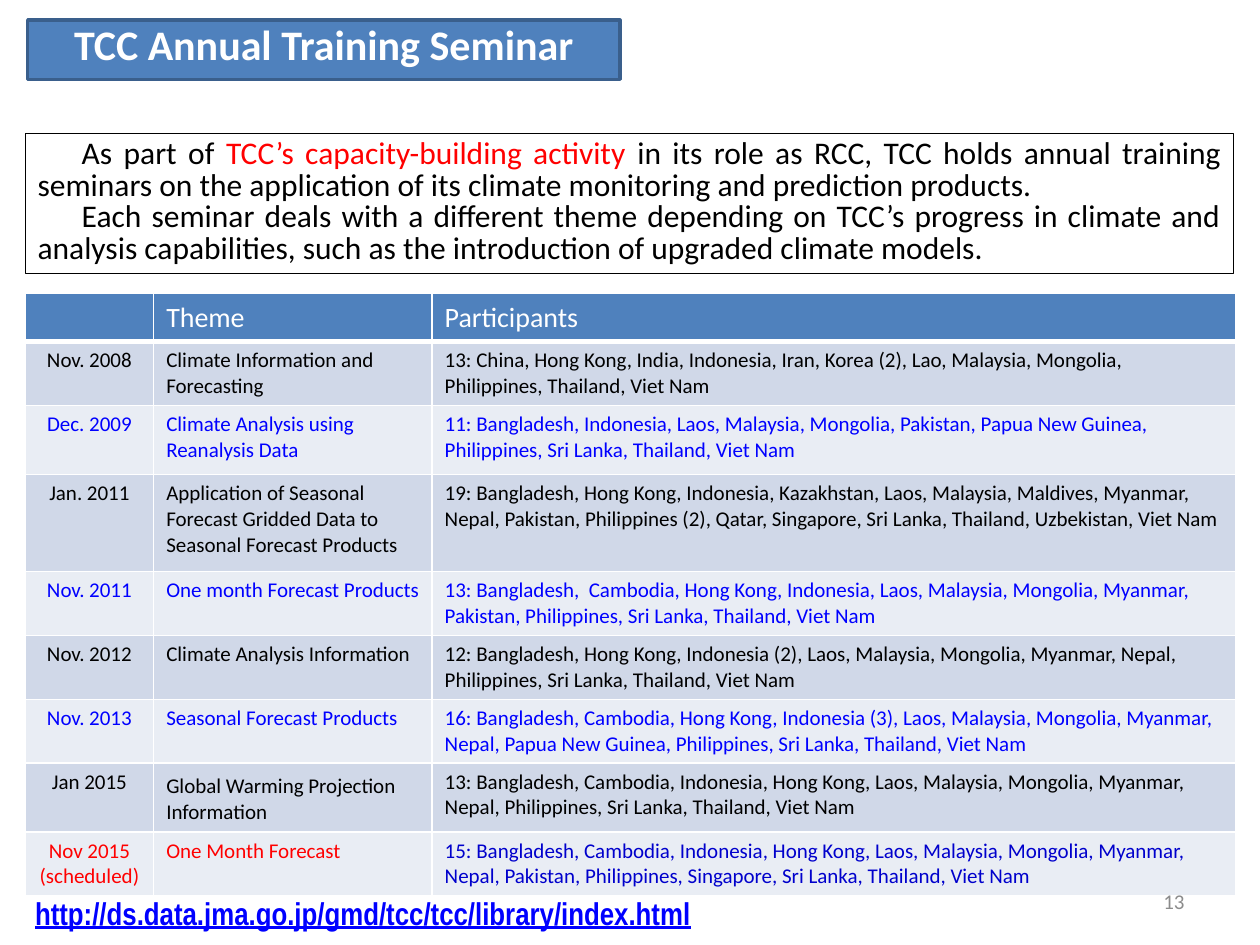
from lxml import etree
from pptx import Presentation
from pptx import util as u
from pptx.dml.color import RGBColor
from pptx.enum import shapes, text
from pptx.oxml.ns import qn

COLORS = {
    "white": "FFFFFF", "black": "000000", "red": "FF0000", "blue": "0000FF",
    "navy": "0000CC", "gray": "8C8C8C", "header": "4F81BD", "outline": "3A5F8C",
    "odd": "D0D8E8", "even": "E9EDF4",
}
ALIGN = text.PP_ALIGN
TITLE = "TCC Annual Training Seminar"
INTRO = [
    [("As part of ", "black"), ("TCC’s capacity-building activity ", "red"),
     ("in its role as RCC, TCC holds annual training seminars on the application "
      "of its climate monitoring and prediction products.", "black")],
    [("Each seminar deals with a different theme depending on TCC’s progress in climate and "
      "analysis capabilities, such as the introduction of upgraded climate models.", "black")],
]
HEADER = ("", "Theme", "Participants")
SEMINARS = [
    ("Nov. 2008", "Climate Information and Forecasting",
     "13: China, Hong Kong, India, Indonesia, Iran, Korea (2), Lao, Malaysia, Mongolia, "
     "Philippines, Thailand, Viet Nam"),
    ("Dec. 2009", "Climate Analysis using Reanalysis Data",
     "11: Bangladesh, Indonesia, Laos, Malaysia, Mongolia, Pakistan, Papua New Guinea, "
     "Philippines, Sri Lanka, Thailand, Viet Nam"),
    ("Jan. 2011", "Application of Seasonal Forecast Gridded Data to Seasonal Forecast Products",
     "19: Bangladesh, Hong Kong, Indonesia, Kazakhstan, Laos, Malaysia, Maldives, Myanmar, "
     "Nepal, Pakistan, Philippines (2), Qatar, Singapore, Sri Lanka, Thailand, Uzbekistan, Viet Nam"),
    ("Nov. 2011", "One month Forecast Products",
     "13: Bangladesh,  Cambodia, Hong Kong, Indonesia, Laos, Malaysia, Mongolia, Myanmar, "
     "Pakistan, Philippines, Sri Lanka, Thailand, Viet Nam"),
    ("Nov. 2012", "Climate Analysis Information",
     "12: Bangladesh, Hong Kong, Indonesia (2), Laos, Malaysia, Mongolia, Myanmar, Nepal, "
     "Philippines, Sri Lanka, Thailand, Viet Nam"),
    ("Nov. 2013", "Seasonal Forecast Products",
     "16: Bangladesh, Cambodia, Hong Kong, Indonesia (3), Laos, Malaysia, Mongolia, Myanmar, "
     "Nepal, Papua New Guinea, Philippines, Sri Lanka, Thailand, Viet Nam"),
    ("Jan 2015", "Global Warming Projection　Information",
     "13: Bangladesh, Cambodia, Indonesia, Hong Kong, Laos, Malaysia, Mongolia, Myanmar, "
     "Nepal, Philippines, Sri Lanka, Thailand, Viet Nam"),
    ("Nov 2015\n(scheduled)", "One Month Forecast",
     "15: Bangladesh, Cambodia, Indonesia, Hong Kong, Laos, Malaysia, Mongolia, Myanmar, "
     "Nepal, Pakistan, Philippines, Singapore, Sri Lanka, Thailand, Viet Nam"),
]
SCHEDULED_COLORS = ("red", "red", "navy")
COLUMN_WIDTHS = (1.02, 2.21, 6.38)
ROW_HEIGHTS = (0.37, 0.5, 0.55, 0.77) + (0.5,) * 5
URL = "http://ds.data.jma.go.jp/gmd/tcc/tcc/library/index.html"
PAGE = "13"


def rgb(name):
    return RGBColor.from_string(COLORS[name])


def box(*lengths):
    return [u.Inches(length) for length in lengths]


def paint(shape, line, width, fill=None):
    if fill:
        shape.fill.solid()
        shape.fill.fore_color.rgb = rgb(fill)
    else:
        shape.fill.background()
    shape.line.color.rgb = rgb(line)
    shape.line.width = u.Pt(width)


def write(frame, paragraphs, size, align=ALIGN.LEFT, spacing=None, name="Calibri", **formats):
    formats = {"size": u.Pt(size), "name": name, "bold": False, **formats}
    for index, runs in enumerate(paragraphs):
        paragraph = frame.add_paragraph() if index else frame.paragraphs[0]
        paragraph.alignment = align
        if spacing:
            paragraph.line_spacing = u.Pt(spacing)
        for content, color in runs:
            run = paragraph.add_run()
            run.text = content
            run.font.color.rgb = rgb(color)
            for key, value in formats.items():
                setattr(run.font, key, value)


def border(cell, bottom):
    properties = cell._tc.get_or_add_tcPr()
    for side, width in (("L", 1), ("R", 1), ("T", 1), ("B", bottom)):
        line = etree.SubElement(properties, qn(f"a:ln{side}"), w=str(u.Pt(width)))
        fill = etree.SubElement(line, qn("a:solidFill"))
        etree.SubElement(fill, qn("a:srgbClr"), val=COLORS["white"])


def add_title(slide):
    title = slide.shapes.title
    title.left, title.top, title.width, title.height = box(0.22, 0.16, 4.7, 0.47)
    geometry = etree.SubElement(title._element.spPr, qn("a:prstGeom"), prst="roundRect")
    etree.SubElement(geometry, qn("a:avLst"))
    paint(title, "outline", 2, "header")
    frame = title.text_frame
    frame.auto_size = text.MSO_AUTO_SIZE.NONE
    frame.vertical_anchor = text.MSO_ANCHOR.MIDDLE
    write(frame, [[(TITLE, "white")]], 24, ALIGN.CENTER, 22, bold=True)


def add_intro(slide):
    shape = slide.shapes.add_shape(shapes.MSO_SHAPE.RECTANGLE, *box(0.2, 1.06, 9.59, 1.11))
    shape.shadow.inherit = False
    paint(shape, "black", 0.75)
    frame = shape.text_frame
    frame.word_wrap = True
    frame.vertical_anchor = text.MSO_ANCHOR.TOP
    write(frame, INTRO, 18, ALIGN.JUSTIFY, 18)
    for paragraph in frame.paragraphs:
        paragraph._p.get_or_add_pPr().set("indent", str(u.Inches(0.35)))


def add_seminars(slide):
    rows = [HEADER] + SEMINARS
    table = slide.shapes.add_table(
        len(rows), len(HEADER),
        *box(0.2, 2.33, sum(COLUMN_WIDTHS), sum(ROW_HEIGHTS))).table
    for column, width in zip(table.columns, COLUMN_WIDTHS):
        column.width = u.Inches(width)
    for r, (row, height) in enumerate(zip(rows, ROW_HEIGHTS)):
        table.rows[r].height = u.Inches(height)
        band = "odd" if r % 2 else "even"
        colors = ("black" if r % 2 else "blue",) * 3
        if r == 0:
            band, colors = "header", ("white",) * 3
        elif r == len(SEMINARS):
            colors = SCHEDULED_COLORS
        for c, (content, color) in enumerate(zip(row, colors)):
            cell = table.cell(r, c)
            border(cell, 1 if r else 3)
            cell.fill.solid()
            cell.fill.fore_color.rgb = rgb(band)
            cell.vertical_anchor = text.MSO_ANCHOR.TOP if r else text.MSO_ANCHOR.MIDDLE
            write(cell.text_frame, [[(line, color)] for line in content.split("\n")],
                  12 if r else 16, ALIGN.LEFT if c or not r else ALIGN.CENTER)


def add_label(slide, place, content, color, size, anchor, **formats):
    frame = slide.shapes.add_textbox(*box(*place)).text_frame
    frame.word_wrap = True
    frame.vertical_anchor = anchor
    write(frame, [[(content, color)]], size, **formats)


def main():
    """Build the training seminar slide."""
    presentation = Presentation()
    presentation.slide_width, presentation.slide_height = box(10, 7.5)
    slide = presentation.slides.add_slide(presentation.slide_layouts[5])
    add_intro(slide)
    add_title(slide)
    add_seminars(slide)
    add_label(slide, (0.18, 7.05, 5.65, 0.4), URL, "blue", 18, text.MSO_ANCHOR.TOP,
              name="Arial Narrow", bold=True, underline=True)
    add_label(slide, (7.17, 6.95, 2.33, 0.4), PAGE, "gray", 12, text.MSO_ANCHOR.MIDDLE,
              align=ALIGN.RIGHT)
    presentation.save("out.pptx")


if __name__ == "__main__":
    main()
